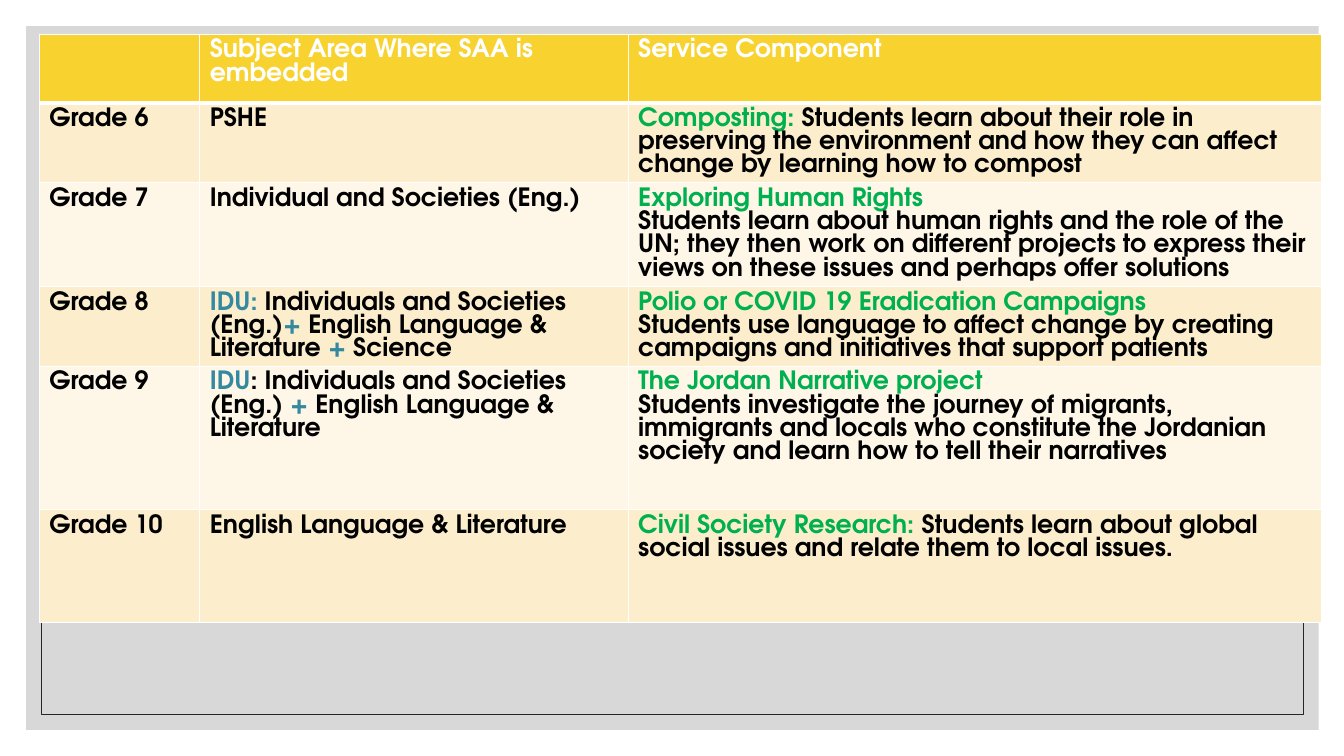
from dataclasses import dataclass

import lxml.etree
import pptx
import pptx.dml.color
import pptx.enum.shapes
import pptx.oxml.ns
import pptx.util

RGBColor = pptx.dml.color.RGBColor
qn = pptx.oxml.ns.qn

WHITE = RGBColor(0xFF, 0xFF, 0xFF)
BLACK = RGBColor(0x00, 0x00, 0x00)
GREEN = RGBColor(0x00, 0xB0, 0x50)
TEAL = RGBColor(0x34, 0x88, 0xA0)
GREY = RGBColor(0xBF, 0xBF, 0xBF)
CHARCOAL = RGBColor(0x26, 0x26, 0x26)
GOLD = RGBColor(0xF8, 0xD2, 0x2F)
BANDS = (RGBColor(0xFC, 0xEE, 0xCD), RGBColor(0xFE, 0xF7, 0xE8))

FONT = "TeX Gyre Adventor"
TEXT_SIZE = pptx.util.Pt(18)
LINE_PITCH = pptx.util.Pt(16.6)
PAGE_WIDTH = pptx.util.Inches(13.33)
PAGE_HEIGHT = pptx.util.Inches(7.5)


@dataclass(frozen=True)
class Area:
    """A rectangle in percent of the slide's width and height."""
    left: float
    top: float
    width: float
    height: float


@dataclass(frozen=True)
class Span:
    text: str
    color: RGBColor = BLACK


Para = tuple[Span, ...]
CellText = tuple[Para, ...]


@dataclass(frozen=True)
class GradeRow:
    height: float
    grade: str
    subject: Para
    service: CellText


BACKDROP = Area(1.95, 3.47, 96.17, 93.07)
FRAME = Area(3.08, 5.47, 93.92, 89.07)
TABLE_LEFT, TABLE_TOP = 2.93, 4.53
COLUMN_WIDTHS = (11.93, 31.88, 51.61)
HEADER_HEIGHT = 9.07
HEADERS = ("", "Subject Area Where SAA is embedded", "Service Component")

GRADES = (
    GradeRow(10.5, "Grade 6", (Span("PSHE"),), ((
        Span("Composting: ", GREEN),
        Span("Students learn about their role in preserving the environment and "
             "how they can affect change by learning how to compost")),)),
    GradeRow(13.73, "Grade 7", (Span("Individual and Societies (Eng.)"),), (
        (Span("Exploring Human Rights", GREEN),),
        (Span("Students learn about human rights and the role of the UN; they then "
              "work on different projects to express their views on these issues "
              "and perhaps offer solutions"),))),
    GradeRow(10.5, "Grade 8", (
        Span("IDU: ", TEAL), Span("Individuals and Societies (Eng.)"),
        Span("+", TEAL), Span(" English Language & Literature "),
        Span("+", TEAL), Span(" Science")), (
        (Span("Polio or COVID 19 Eradication Campaigns", GREEN),),
        (Span("Students use language to affect change by creating campaigns and "
              "initiatives that support patients"),))),
    GradeRow(18.93, "Grade 9", (
        Span("IDU", TEAL), Span(": Individuals and Societies (Eng.) "),
        Span("+", TEAL), Span(" English Language & Literature")), (
        (Span("The Jordan Narrative project", GREEN),),
        (Span("Students investigate the journey of migrants, immigrants and locals "
              "who constitute the Jordanian society and learn how to tell their "
              "narratives"),))),
    GradeRow(14.93, "Grade 10", (Span("English Language & Literature"),), ((
        Span("Civil Society Research: ", GREEN),
        Span("Students learn about global social issues and relate them to local "
             "issues.")),)),
)


def across(percent: float) -> int:
    return round(PAGE_WIDTH * percent / 100)


def down(percent: float) -> int:
    return round(PAGE_HEIGHT * percent / 100)


def add_rectangle(page: pptx.slide.Slide, area: Area) -> pptx.shapes.autoshape.Shape:
    box = page.shapes.add_shape(
        pptx.enum.shapes.MSO_SHAPE.RECTANGLE, across(area.left), down(area.top),
        across(area.width), down(area.height))
    box.shadow.inherit = False
    return box


def add_backdrop(page: pptx.slide.Slide) -> None:
    box = add_rectangle(page, BACKDROP)
    box.fill.solid()
    box.fill.fore_color.rgb = GREY
    box.line.fill.background()
    tint = box._element.spPr.find(qn("a:solidFill")).find(qn("a:srgbClr"))
    lxml.etree.SubElement(tint, qn("a:alpha"), val="60000")


def add_frame(page: pptx.slide.Slide) -> None:
    box = add_rectangle(page, FRAME)
    box.fill.background()
    box.line.color.rgb = CHARCOAL
    box.line.width = pptx.util.Pt(0.5)


def set_borders(cell: pptx.table._Cell, top: float, bottom: float) -> None:
    """Rule all four sides in white; the widths are in points."""
    properties = cell._tc.get_or_add_tcPr()
    sides = (("a:lnL", 1), ("a:lnR", 1), ("a:lnT", top), ("a:lnB", bottom))
    for position, (tag, width) in enumerate(sides):
        line = lxml.etree.Element(qn(tag), w=str(pptx.util.Pt(width)))
        fill = lxml.etree.SubElement(line, qn("a:solidFill"))
        lxml.etree.SubElement(fill, qn("a:srgbClr"), val=str(WHITE))
        properties.insert(position, line)


def write_cell(cell: pptx.table._Cell, paras: CellText) -> None:
    cell.text_frame.text = "\n".join("" for _ in paras)
    for para, spans in zip(cell.text_frame.paragraphs, paras):
        para.line_spacing = LINE_PITCH
        para.font.size = TEXT_SIZE
        for span in spans:
            run = para.add_run()
            run.text = span.text
            run.font.name = FONT
            run.font.size = TEXT_SIZE
            run.font.bold = True
            run.font.color.rgb = span.color


def add_grade_table(page: pptx.slide.Slide) -> None:
    heights = [HEADER_HEIGHT] + [row.height for row in GRADES]
    contents: list[list[CellText]] = [[((Span(title, WHITE),),) for title in HEADERS]]
    contents += [[((Span(row.grade),),), (row.subject,), row.service] for row in GRADES]
    table = page.shapes.add_table(
        len(heights), len(COLUMN_WIDTHS), across(TABLE_LEFT), down(TABLE_TOP),
        across(sum(COLUMN_WIDTHS)), down(sum(heights))).table
    for column, width in zip(table.columns, COLUMN_WIDTHS):
        column.width = across(width)
    for index, (height, texts) in enumerate(zip(heights, contents)):
        table.rows[index].height = down(height)
        for cell, paras in zip(table.rows[index].cells, texts):
            cell.fill.solid()
            cell.fill.fore_color.rgb = BANDS[(index - 1) % 2] if index else GOLD
            set_borders(cell, top=3 if index == 1 else 1, bottom=1 if index else 3)
            write_cell(cell, paras)


def main() -> None:
    deck = pptx.Presentation()
    deck.slide_width = PAGE_WIDTH
    deck.slide_height = PAGE_HEIGHT
    page = deck.slides.add_slide(deck.slide_layouts[6])
    add_backdrop(page)
    add_frame(page)
    add_grade_table(page)
    deck.save("out.pptx")


if __name__ == "__main__":
    main()
